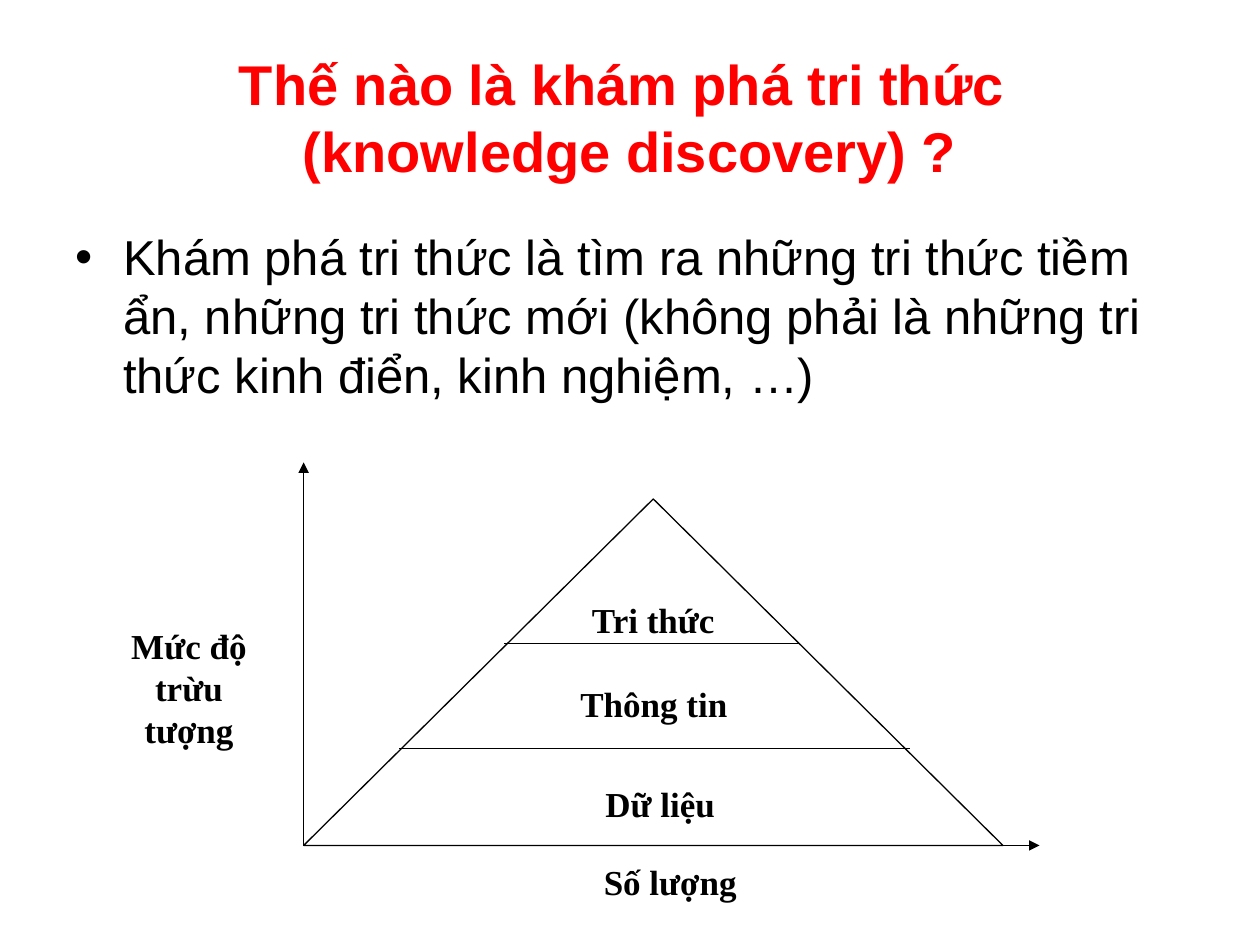
from pptx import Presentation
from pptx.dml.color import RGBColor
from pptx.enum.shapes import MSO_CONNECTOR, MSO_SHAPE
from pptx.enum.text import MSO_ANCHOR, PP_ALIGN
from pptx.oxml.ns import qn
from pptx.util import Inches, Pt
from lxml.etree import SubElement

COLORS = {"title": "FF0000", "ink": "000000", "paper": "FFFFFF"}

TITLE = "Thế nào là khám phá tri thức \v(knowledge discovery) ?"
DEFINITION = ("Khám phá tri thức là tìm ra những tri thức tiềm ẩn, những tri thức mới "
              "(không phải là những tri thức kinh điển, kinh nghiệm, …)")

# Left, top, width, height in inches
TITLE_BOX = (0.5, 0.3, 9, 1.25)
DEFINITION_BOX = (0.5, 1.75, 9, 4.95)
PYRAMID_BOX = (2.41, 3.96, 5.55, 2.75)
LABELS = [
    ("Dữ liệu", (3.62, 6.16, 3.24, 0.45)),
    ("Thông tin", (4.08, 5.37, 2.22, 0.46)),
    ("Tri thức", (4.58, 4.7, 1.21, 0.34)),
    ("Số lượng", (3.7, 6.78, 3.24, 0.4)),
    ("Mức độ trừu tượng", (0.75, 4.91, 1.5, 0.73)),
]

ORIGIN = (2.41, 6.71)
AXIS_ENDS = [(8.25, 6.71), (2.41, 3.67)]
LEVEL_LINES = [((3.17, 5.94), (7.22, 5.94)), ((4, 5.11), (6.34, 5.11))]

TITLE_FONT = {"name": "Arial", "size": Pt(32), "bold": True}
DEFINITION_FONT = {"name": "Arial", "size": Pt(28)}
LABEL_FONT = {"name": "Times New Roman", "size": Pt(20), "bold": True}


def rgb(name):
    return RGBColor.from_string(COLORS[name])


def inches(values):
    return [Inches(value) for value in values]


def write(shape, text, font, color="ink", align=PP_ALIGN.CENTER, anchor=MSO_ANCHOR.TOP):
    frame = shape.text_frame
    frame.word_wrap = True
    frame.vertical_anchor = anchor
    paragraph = frame.paragraphs[0]
    paragraph.text = text
    paragraph.alignment = align
    for run in paragraph.runs:
        for attribute, value in font.items():
            setattr(run.font, attribute, value)
        run.font.color.rgb = rgb(color)
    return paragraph


def add_bullet(paragraph, indent):
    properties = paragraph._p.get_or_add_pPr()
    properties.set("marL", str(indent))
    properties.set("indent", str(-indent))
    SubElement(properties, qn("a:buFont")).set("typeface", "Arial")
    SubElement(properties, qn("a:buChar")).set("char", "•")


def add_paper_shape(slide, preset, box):
    shape = slide.shapes.add_shape(preset, *inches(box))
    shape.shadow.inherit = False
    shape.fill.solid()
    shape.fill.fore_color.rgb = rgb("paper")
    shape.line.fill.background()
    return shape


def draw_outline(line):
    line.color.rgb = rgb("ink")
    line.width = Pt(0.75)


def add_line(slide, start, end, arrow=False):
    connector = slide.shapes.add_connector(MSO_CONNECTOR.STRAIGHT, *inches(start + end))
    draw_outline(connector.line)
    if arrow:
        SubElement(connector.line._get_or_add_ln(), qn("a:tailEnd")).set("type", "triangle")
    SubElement(connector._element.spPr, qn("a:effectLst"))


def main():
    presentation = Presentation()
    presentation.slide_width, presentation.slide_height = inches((10, 7.5))
    slide = presentation.slides.add_slide(presentation.slide_layouts[6])

    title = slide.shapes.add_textbox(*inches(TITLE_BOX))
    write(title, TITLE, TITLE_FONT, "title", anchor=MSO_ANCHOR.MIDDLE)

    definition = slide.shapes.add_textbox(*inches(DEFINITION_BOX))
    add_bullet(write(definition, DEFINITION, DEFINITION_FONT, align=PP_ALIGN.LEFT), Inches(0.38))

    for axis_end in AXIS_ENDS:
        add_line(slide, ORIGIN, axis_end, arrow=True)
    pyramid = add_paper_shape(slide, MSO_SHAPE.ISOSCELES_TRIANGLE, PYRAMID_BOX)
    draw_outline(pyramid.line)
    for start, end in LEVEL_LINES:
        add_line(slide, start, end)

    for text, box in LABELS:
        write(add_paper_shape(slide, MSO_SHAPE.RECTANGLE, box), text, LABEL_FONT)

    presentation.save("out.pptx")


if __name__ == "__main__":
    main()
